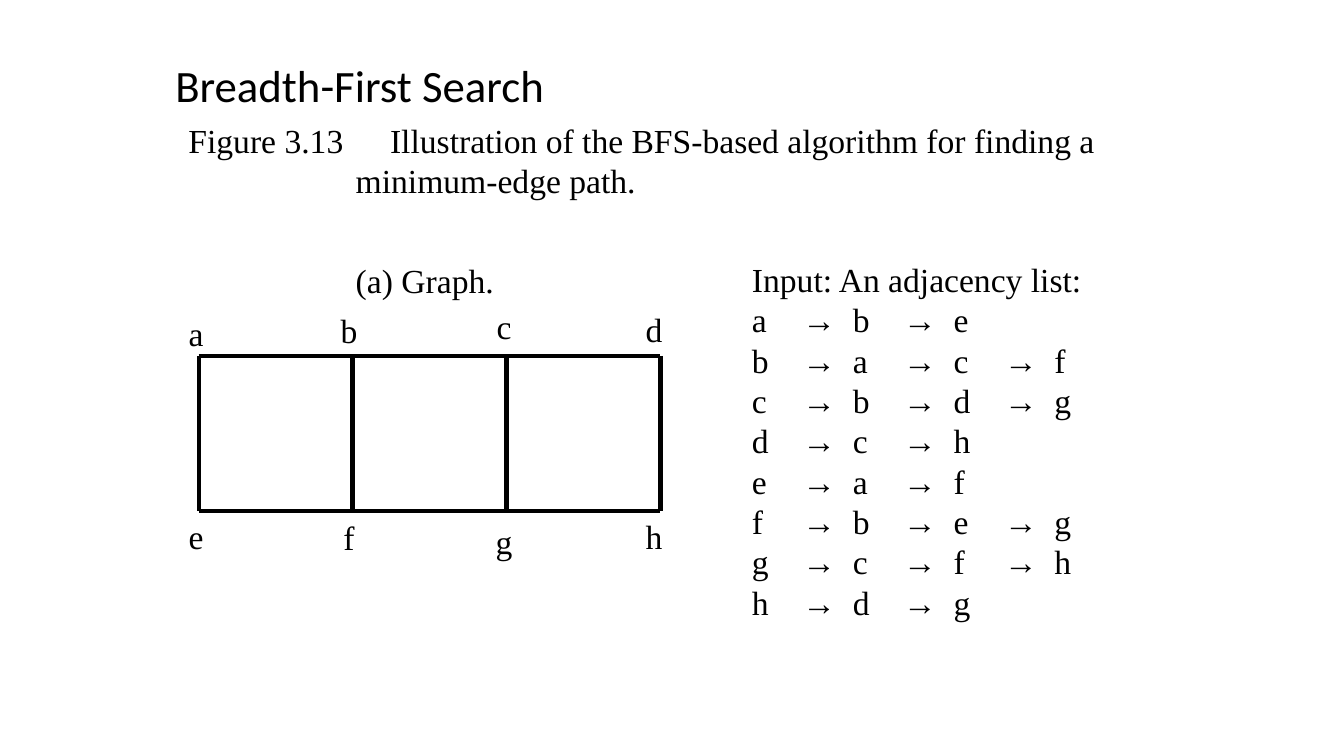
from lxml.etree import SubElement
from pptx import Presentation
from pptx.dml.color import RGBColor
from pptx.enum.shapes import MSO_CONNECTOR
from pptx.enum.text import MSO_AUTO_SIZE, PP_ALIGN
from pptx.oxml.ns import qn
from pptx.util import Inches, Pt

BLACK = RGBColor(0, 0, 0)
WHITE = RGBColor(255, 255, 255)
SERIF = "Times New Roman"
WIDE, HIGH = Inches(13.33), Inches(7.5)
COL, ROW = WIDE / 100, HIGH / 100
PITCH = Pt(28.8)

TOP = [("a", -6.4), ("b", -6.67), ("c", -7.2), ("d", -6.8)]
BASE = [("e", 0), ("f", 0.13), ("g", 0.67), ("h", 0)]
SHIFT = [-2.4, -2.48, -2.4, -2.7]
LINKS = {"a": "be", "b": "acf", "c": "bdg", "d": "ch",
         "e": "af", "f": "beg", "g": "cfh", "h": "dg"}


def add_box(slide, box, wrap=True):
    x, y, w, h = box
    shape = slide.shapes.add_textbox(
        int(x * COL), int(y * ROW), int(w * COL), int(h * ROW))
    frame = shape.text_frame
    frame.word_wrap = wrap
    frame.auto_size = MSO_AUTO_SIZE.SHAPE_TO_FIT_TEXT
    return frame


def add_text(para, text, size=24, font=SERIF, pitch=PITCH):
    para.line_spacing = pitch
    run = para.add_run()
    run.text = text
    run.font.size = Pt(size)
    run.font.name = font
    run.font.color.rgb = BLACK


def set_tabs(para, stops, indent=0):
    props = para._p.get_or_add_pPr()
    props.set("marL", str(Inches(indent)))
    props.set("indent", "0")
    tabs = SubElement(props, qn("a:tabLst"))
    for stop in stops:
        SubElement(tabs, qn("a:tab"), pos=str(Inches(stop)), algn="l")


def add_line(slide, x1, y1, x2, y2):
    line = slide.shapes.add_connector(
        MSO_CONNECTOR.STRAIGHT,
        int(x1 * COL), int(y1 * ROW), int(x2 * COL), int(y2 * ROW))
    line.line.color.rgb = BLACK
    line.line.width = Pt(3)
    SubElement(line._element.spPr, qn("a:effectLst"))


def add_title(slide, box):
    frame = add_box(slide, box, False)
    add_text(frame.paragraphs[0], "Breadth-First Search", 32, "Calibri", 1.5)


def add_caption(slide, box):
    frame = add_box(slide, box)
    first = frame.paragraphs[0]
    add_text(first, "Figure 3.13\tIllustration of the BFS-based algorithm for finding a")
    set_tabs(first, [1.7])
    for text, gap in [("minimum-edge path.", 0), ("(a) Graph.", 42.6)]:
        para = frame.add_paragraph()
        add_text(para, text)
        para.space_before = Pt(gap)
        set_tabs(para, [], 1.66)


def add_graph(slide, box):
    x, y, w, h = box
    for edge in (y, y + h):
        add_line(slide, x, edge, x + w, edge)
    for i, shift in enumerate(SHIFT):
        post = x + w * i / 3
        add_line(slide, post, y, post, y + h)
        for edge, (name, drop) in ((y, TOP[i]), (y + h, BASE[i])):
            frame = add_box(slide, (post + shift, edge + drop, 4.43, 6.67))
            para = frame.paragraphs[0]
            para.alignment = PP_ALIGN.CENTER
            add_text(para, name, pitch=1)


def add_list(slide, box):
    frame = add_box(slide, box)
    add_text(frame.paragraphs[0], "Input: An adjacency list:")
    for node, links in LINKS.items():
        para = frame.add_paragraph()
        add_text(para, "\t→\t".join([node, *links]))
        set_tabs(para, [0.45, 1, 1.36, 2, 2.45, 3])


def main():
    deck = Presentation()
    deck.slide_width, deck.slide_height = WIDE, HIGH
    slide = deck.slides.add_slide(deck.slide_layouts[6])
    fill = slide.background.fill
    fill.solid()
    fill.fore_color.rgb = WHITE
    add_caption(slide, (13.28, 15.2, 75.17, 24.67))
    add_graph(slide, (14.78, 47.07, 34.36, 20.53))
    add_list(slide, (55.21, 33.6, 34.28, 55.2))
    add_title(slide, (12.3, 3.47, 29.26, 11.07))
    deck.save("out.pptx")


if __name__ == "__main__":
    main()
